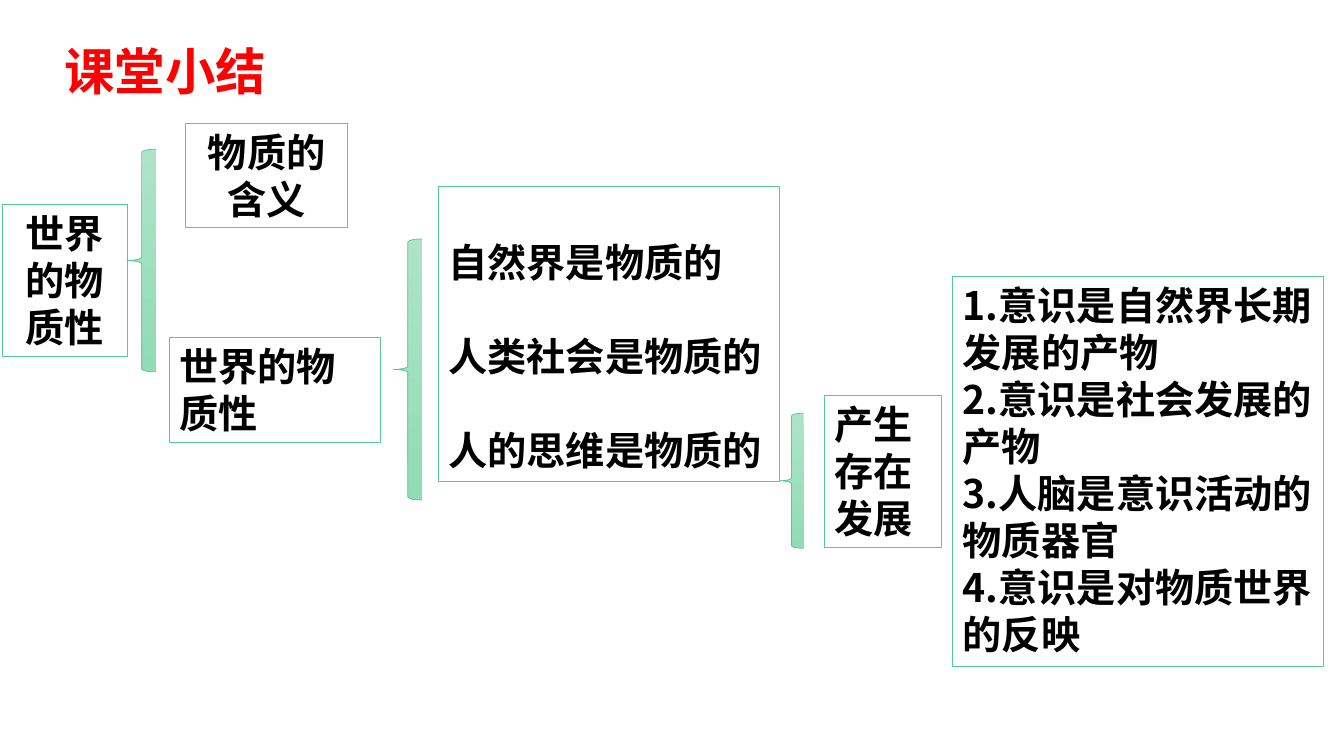
from lxml import etree
from pptx import Presentation
from pptx.dml.color import RGBColor
from pptx.enum import shapes, text
from pptx.oxml import ns
from pptx.util import Inches, Pt

COLORS = {"title": "FF0000", "text": "000000", "line": "56CA95",
          "brace_top": "AEE3C8", "brace_bottom": "90DCB5"}
CJK_FONT = "Noto Sans CJK SC"
LEFT, CENTER = text.PP_ALIGN.LEFT, text.PP_ALIGN.CENTER

TITLE = "课堂小结"

# Boxes: left, top, width, height, alignment, line spacing, paragraphs
TOPICS = [
    (0.02, 2.03, 1.24, 1.51, CENTER, 1, ["世界的物质性"]),
    (1.84, 1.22, 1.61, 1.04, CENTER, 1, ["物质的含义"]),
    (1.68, 3.35, 2.09, 1.04, LEFT, 1, ["世界的物质性"]),
    (4.35, 1.85, 3.38, 2.93, LEFT, 2,
     ["自然界是物质的", "人类社会是物质的", "人的思维是物质的"]),
    (8.18, 3.92, 1.16, 1.51, LEFT, 1, ["产生", "存在", "发展"]),
    (9.45, 2.74, 3.68, 3.87, LEFT, 1,
     ["1.意识是自然界长期发展的产物", "2.意识是社会发展的产物",
      "3.人脑是意识活动的物质器官", "4.意识是对物质世界的反映"]),
]

# Braces: left, top, width, height
BRACES = [(1.26, 1.48, 0.29, 2.21), (3.9, 2.37, 0.29, 2.59), (7.73, 4.1, 0.24, 1.34)]


def rgb(name):
    return RGBColor.from_string(COLORS[name])


def add_run(paragraph, wording, size, font_name, color):
    run = paragraph.add_run()
    run.text = wording
    run.font.size, run.font.bold, run.font.name = Pt(size), True, font_name
    run.font.color.rgb = rgb(color)
    east_asian = etree.SubElement(run.font._element, ns.qn("a:ea"))
    east_asian.set("typeface", CJK_FONT)


def add_outlined(slide, kind, bounds):
    shape = slide.shapes.add_shape(kind, *map(Inches, bounds))
    shape.shadow.inherit = False
    shape.line.color.rgb = rgb("line")
    shape.line.width = Pt(0.5)
    return shape


def add_title(slide):
    title = slide.shapes.title
    title.left, title.top, title.width, title.height = map(Inches, (0.54, 0.35, 2.21, 0.71))
    frame = title.text_frame
    frame.word_wrap = False
    frame.auto_size = text.MSO_AUTO_SIZE.SHAPE_TO_FIT_TEXT
    frame.vertical_anchor = text.MSO_ANCHOR.TOP
    frame.paragraphs[0].alignment = LEFT
    add_run(frame.paragraphs[0], TITLE, 36, "Arial", "title")


def add_topic(slide, bounds, alignment, spacing, lines):
    topic = add_outlined(slide, shapes.MSO_SHAPE.RECTANGLE, bounds)
    topic.fill.background()
    frame = topic.text_frame
    frame.word_wrap = True
    frame.auto_size = text.MSO_AUTO_SIZE.SHAPE_TO_FIT_TEXT
    frame.vertical_anchor = text.MSO_ANCHOR.TOP
    for index, line in enumerate(lines):
        paragraph = frame.add_paragraph() if index else frame.paragraphs[0]
        paragraph.alignment = alignment
        paragraph.line_spacing = float(spacing)
        add_run(paragraph, line, 28, CJK_FONT, "text")


def add_brace(slide, bounds):
    brace = add_outlined(slide, shapes.MSO_SHAPE.LEFT_BRACE, bounds)
    brace.adjustments[0] = 0.11
    brace.fill.gradient()
    brace.fill.gradient_angle = 270
    for stop, color in zip(brace.fill.gradient_stops, ("brace_top", "brace_bottom")):
        stop.color.rgb = rgb(color)
    first, last = brace.fill.gradient_stops
    first.position, last.position = 0, 1


def main():
    deck = Presentation()
    deck.slide_width, deck.slide_height = Inches(13.33), Inches(7.5)
    slide = deck.slides.add_slide(deck.slide_layouts[5])
    add_title(slide)
    # Summary tree, read from left to right
    for *bounds, alignment, spacing, lines in TOPICS:
        add_topic(slide, bounds, alignment, spacing, lines)
    for bounds in BRACES:
        add_brace(slide, bounds)
    deck.save("out.pptx")


if __name__ == "__main__":
    main()
